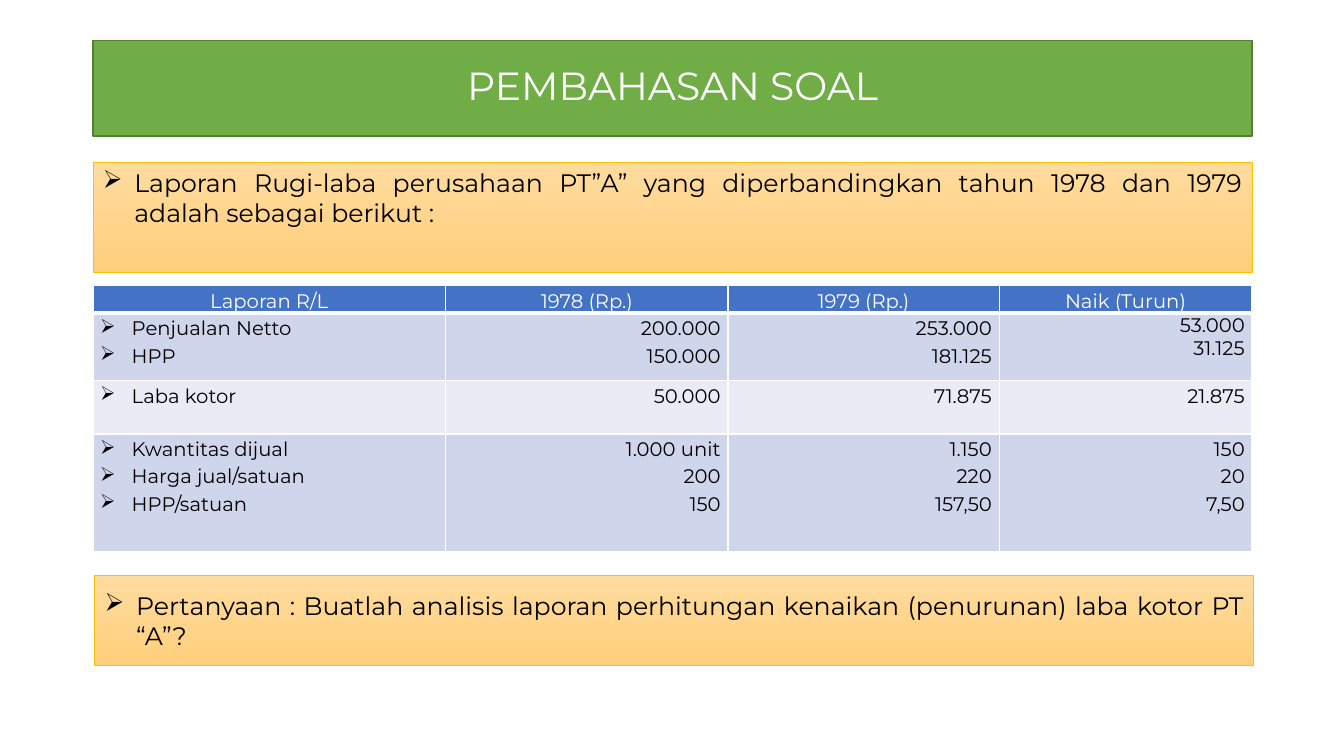
import pptx
import pptx.dml.color
import pptx.enum.shapes
import pptx.enum.text
import pptx.util
from lxml import etree

Pt = pptx.util.Pt
ALIGN = pptx.enum.text.PP_ALIGN
ANCHOR = pptx.enum.text.MSO_ANCHOR
RECTANGLE = pptx.enum.shapes.MSO_SHAPE.RECTANGLE
DRAWING = "{http://schemas.openxmlformats.org/drawingml/2006/main}"


def color(value):
    return pptx.dml.color.RGBColor.from_string(value)


def format_paragraph(paragraph, size, ink, align, spacing=1.0, bullet=False):
    paragraph.alignment = align
    paragraph.line_spacing = spacing
    if bullet:
        properties = paragraph._p.get_or_add_pPr()
        properties.set("marL", str(Pt(22.5)))
        properties.set("indent", str(-Pt(22.5)))
        etree.SubElement(properties, DRAWING + "buChar", char="➢")
    for run in paragraph.runs:
        run.font.name = "Montserrat"
        run.font.size = Pt(size)
        run.font.bold = False
        run.font.color.rgb = color(ink)


presentation = pptx.Presentation()
presentation.slide_width, presentation.slide_height = Pt(960), Pt(540)
slide = presentation.slides.add_slide(presentation.slide_layouts[6])

# Income statement table
statement = [
    ["Laporan R/L", "1978 (Rp.)", "1979 (Rp.)", "Naik (Turun)"],
    ["Penjualan Netto\nHPP", "200.000\n150.000", "253.000\n181.125", "53.000\n31.125"],
    ["Laba kotor", "50.000", "71.875", "21.875"],
    ["Kwantitas dijual\nHarga jual/satuan\nHPP/satuan", "1.000 unit\n200\n150",
     "1.150\n220\n157,50", "150\n20\n7,50"],
]
column_widths = [252, 201.6, 193.7, 180.7]
row_heights = [18, 48.2, 38.2, 84.2]
row_fills = ["4472C4", "CFD5EA", "E9EBF5", "CFD5EA"]
table = slide.shapes.add_table(4, 4, Pt(66.4), Pt(204), Pt(828), Pt(188.6)).table
for column, width in zip(table.columns, column_widths):
    column.width = Pt(width)
for r, (texts, height, row_fill) in enumerate(zip(statement, row_heights, row_fills)):
    table.rows[r].height = Pt(height)
    for c, text in enumerate(texts):
        cell = table.cell(r, c)
        cell.margin_left = cell.margin_right = Pt(5.2)
        cell.margin_top = cell.margin_bottom = 0
        for side in "LRTB":
            weight = 3 if r == 0 and side == "B" else 1
            border = etree.SubElement(cell._tc.get_or_add_tcPr(), DRAWING + "ln" + side,
                                      w=str(Pt(weight)))
            border_fill = etree.SubElement(border, DRAWING + "solidFill")
            etree.SubElement(border_fill, DRAWING + "srgbClr", val="FFFFFF")
        cell.fill.solid()
        cell.fill.fore_color.rgb = color(row_fill)
        cell.text_frame.text = text
        if r == 0:
            align = ALIGN.CENTER
        else:
            align = ALIGN.JUSTIFY if c == 0 else ALIGN.RIGHT
        spacing = 1.0 if (r, c) == (1, 3) else 1.15
        for paragraph in cell.text_frame.paragraphs:
            format_paragraph(paragraph, 14, "FFFFFF" if r == 0 else "000000", align,
                             spacing, bullet=r > 0 and c == 0)

# Title banner
title = slide.shapes.add_shape(RECTANGLE, Pt(66.4), Pt(28.8), Pt(828), Pt(68.4))
title.shadow.inherit = False
title.fill.solid()
title.fill.fore_color.rgb = color("70AD47")
title.line.color.rgb = color("538035")
title.line.width = Pt(1)
title.text_frame.text = "PEMBAHASAN SOAL"
title.text_frame.vertical_anchor = ANCHOR.MIDDLE
format_paragraph(title.text_frame.paragraphs[0], 28, "FFFFFF", ALIGN.CENTER, 0.9)

# Introduction and question boxes
notes = [
    (66.4, 116, 78.6, ANCHOR.TOP,
     "Laporan Rugi-laba perusahaan PT”A” yang diperbandingkan tahun 1978 dan 1979 "
     "adalah sebagai berikut :"),
    (67.6, 411, 64.2, ANCHOR.MIDDLE,
     "Pertanyaan : Buatlah analisis laporan perhitungan kenaikan (penurunan) "
     "laba kotor PT “A”?"),
]
for left, top, height, anchor, text in notes:
    note = slide.shapes.add_shape(RECTANGLE, Pt(left), Pt(top), Pt(828), Pt(height))
    note.shadow.inherit = False
    note.fill.gradient()
    note.fill.gradient_angle = 270
    for stop, shade in zip(note.fill.gradient_stops, ["FFDB9E", "FFD07C"]):
        stop.color.rgb = color(shade)
    note.line.color.rgb = color("FFC000")
    note.line.width = Pt(0.5)
    note.text_frame.text = text
    note.text_frame.word_wrap = True
    note.text_frame.vertical_anchor = anchor
    format_paragraph(note.text_frame.paragraphs[0], 18, "000000", ALIGN.JUSTIFY, bullet=True)

presentation.save("out.pptx")
